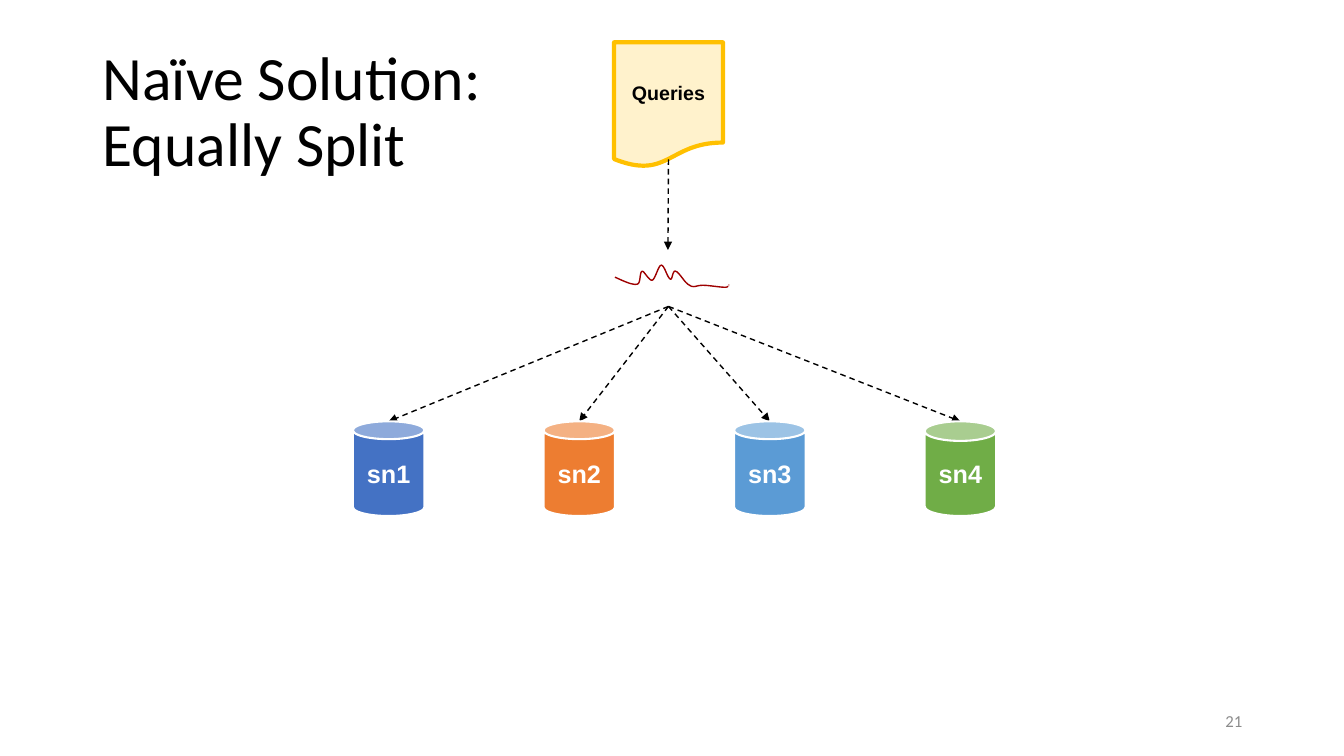
from lxml import etree
from pptx import Presentation
from pptx.dml.color import RGBColor
from pptx.enum.dml import MSO_LINE
from pptx.enum.shapes import MSO_CONNECTOR, MSO_SHAPE
from pptx.enum.text import MSO_ANCHOR, PP_ALIGN
from pptx.oxml.ns import qn
from pptx.util import Inches, Pt

DASH = MSO_LINE.DASH
STRAIGHT = MSO_CONNECTOR.STRAIGHT
CAN, DOCUMENT = MSO_SHAPE.CAN, MSO_SHAPE.FLOWCHART_DOCUMENT
MIDDLE = MSO_ANCHOR.MIDDLE
LEFT, CENTER, RIGHT = PP_ALIGN.LEFT, PP_ALIGN.CENTER, PP_ALIGN.RIGHT

COLORS = {
    "black": "000000", "white": "FFFFFF", "gray": "8C8C8C",
    "cream": "FFF2CC", "gold": "FFC000", "curve": "9E0000",
    "sn1": "4472C4", "sn2": "ED7D31", "sn3": "5B9BD5", "sn4": "70AD47",
}
RGB = {name: RGBColor.from_string(value) for name, value in COLORS.items()}


def write(sp, text, size, color="black", font="Arial", bold=False, align=CENTER, spacing=1.0):
    tf = sp.text_frame
    tf.word_wrap = True
    tf.vertical_anchor = MIDDLE
    p = tf.paragraphs[0]
    p.text = text
    p.alignment = align
    p.line_spacing = spacing
    for r in p.runs:
        r.font.name = font
        r.font.size = Pt(size)
        r.font.bold = bold
        r.font.color.rgb = RGB[color]


def add_arrow(s, x1, y1, x2, y2):
    cn = s.shapes.add_connector(STRAIGHT, Inches(x1), Inches(y1), Inches(x2), Inches(y2))
    cn.line.color.rgb = RGB["black"]
    cn.line.width = Pt(1)
    cn.line.dash_style = DASH
    etree.SubElement(cn.line._get_or_add_ln(), qn("a:tailEnd"), type="triangle")
    etree.SubElement(cn._element.spPr, qn("a:effectLst"))
    return cn


prs = Presentation()
prs.slide_width, prs.slide_height = Inches(13.33), Inches(7.5)
s = prs.slides.add_slide(prs.slide_layouts[6])

number = s.shapes.add_textbox(Inches(9.42), Inches(6.95), Inches(3), Inches(0.4))
write(number, "21", 12, "gray", "Calibri", align=RIGHT)

queries = s.shapes.add_shape(DOCUMENT, Inches(6.09), Inches(0.42), Inches(1.08), Inches(1.24))
queries.shadow.inherit = False
queries.fill.solid()
queries.fill.fore_color.rgb = RGB["cream"]
queries.line.color.rgb = RGB["gold"]
queries.line.width = Pt(3)
write(queries, "Queries", 14, bold=True)

start = (6.1, 2.75)
beziers = [
    ((6.19, 2.79), (6.27, 2.83), (6.32, 2.82)),
    ((6.36, 2.81), (6.34, 2.7), (6.37, 2.69)),
    ((6.39, 2.69), (6.44, 2.79), (6.47, 2.78)),
    ((6.5, 2.77), (6.53, 2.63), (6.56, 2.63)),
    ((6.59, 2.63), (6.62, 2.76), (6.65, 2.77)),
    ((6.67, 2.78), (6.67, 2.68), (6.7, 2.69)),
    ((6.74, 2.7), (6.79, 2.81), (6.84, 2.83)),
    ((6.88, 2.86), (6.91, 2.83), (6.97, 2.83)),
    ((7.03, 2.83), (7.14, 2.85), (7.19, 2.85)),
    ((7.23, 2.85), (7.23, 2.83), (7.23, 2.82)),
]
STEPS = 8
points = []
a = start
for b, c, d in beziers:
    for i in range(1, STEPS + 1):
        t = i / STEPS
        u = 1 - t
        points.append([
            Inches(u**3 * a[k] + 3 * u**2 * t * b[k] + 3 * u * t**2 * c[k] + t**3 * d[k])
            for k in (0, 1)
        ])
    a = d
builder = s.shapes.build_freeform(Inches(start[0]), Inches(start[1]))
builder.add_line_segments(points, close=False)
curve = builder.convert_to_shape()
curve.shadow.inherit = False
curve.fill.background()
curve.line.color.rgb = RGB["curve"]
curve.line.width = Pt(1)

frame = s.shapes.add_shape(DOCUMENT, Inches(6.02), Inches(2.48), Inches(1.21), Inches(0.61))
frame.shadow.inherit = False
frame.fill.background()
frame.line.color.rgb = RGB["white"]
frame.line.width = Pt(1)

hub_x = 6.63
can_top, can_width, can_height = 4.18, 0.71, 0.94
can_lefts = {f"sn{i + 1}": 3.5 + 1.89 * i for i in range(4)}

add_arrow(s, hub_x, 1.58, hub_x, 2.48).end_connect(frame, 0)
for left in can_lefts.values():
    add_arrow(s, hub_x, 3.04, left + can_width / 2, can_top)

for name, left in can_lefts.items():
    can = s.shapes.add_shape(CAN, Inches(left), Inches(can_top), Inches(can_width), Inches(can_height))
    can.shadow.inherit = False
    can.fill.solid()
    can.fill.fore_color.rgb = RGB[name]
    can.line.color.rgb = RGB["white"]
    can.line.width = Pt(1.5)
    write(can, name, 18, "white", bold=True)
can.adjustments[0] = 0.274

title = s.shapes.add_textbox(Inches(0.92), Inches(0.4), Inches(11.5), Inches(1.45))
write(title, "Naïve Solution:\vEqually Split", 44, font="Calibri", align=LEFT, spacing=0.9)

prs.save("out.pptx")
